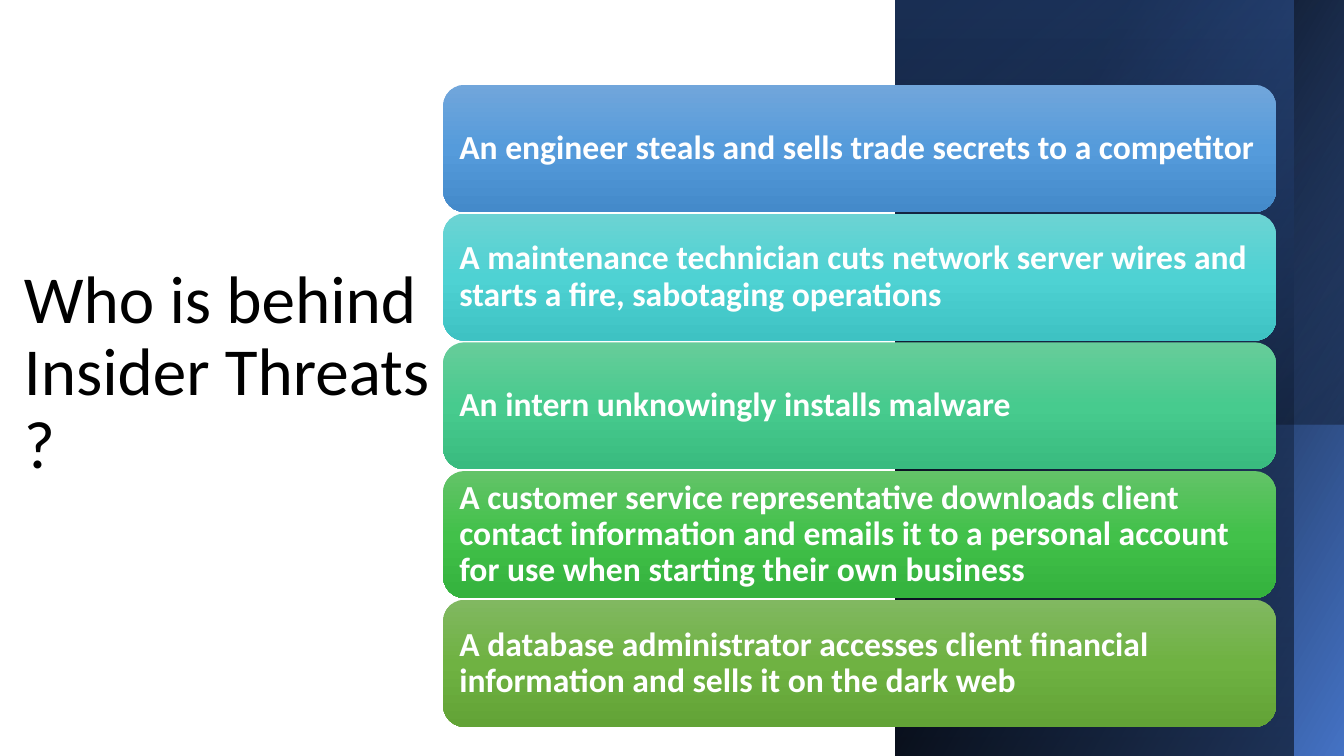
from lxml import etree
from pptx import Presentation
from pptx.dml.color import RGBColor
from pptx.enum import shapes, text
from pptx.oxml import ns
from pptx.util import Pt

COLORS = {
    "black": "000000", "white": "FFFFFF", "blue": "4472C4", "navy": "2F5597",
    "sky": ("71A6DB", "559BDB", "448ACA"),
    "teal": ("6CD3D3", "4ED2D3", "3EC2C3"),
    "mint": ("67CC9A", "47CB8E", "39BB7F"),
    "green": ("63C368", "42C14A", "34B23D"),
    "olive": ("81B861", "6FB242", "62A336"),
}
FONT = "Calibri"
TITLE = "Who is behind Insider Threats ?"
THREATS = [
    ("sky", "An engineer steals and sells trade secrets to a competitor"),
    ("teal", "A maintenance technician cuts network server wires and starts a fire, "
             "sabotaging operations"),
    ("mint", "An intern unknowingly installs malware"),
    ("green", "A customer service representative downloads client contact information "
              "and emails it to a personal account for use when starting their own business"),
    ("olive", "A database administrator accesses client financial information "
              "and sells it on the dark web"),
]


def set_gradient(sp, stops, angle):
    """Fill with (position %, colour, opacity %) stops; angle is clockwise."""
    sp.fill.background()
    old = sp._element.spPr.find(ns.qn("a:noFill"))
    grad = etree.Element(ns.qn("a:gradFill"), rotWithShape="1")
    stop_list = etree.SubElement(grad, ns.qn("a:gsLst"))
    for position, color, opacity in stops:
        gs = etree.SubElement(stop_list, ns.qn("a:gs"), pos=str(position * 1000))
        rgb = etree.SubElement(gs, ns.qn("a:srgbClr"), val=color)
        if opacity < 100:
            etree.SubElement(rgb, ns.qn("a:alpha"), val=str(opacity * 1000))
    etree.SubElement(grad, ns.qn("a:lin"), ang=str(angle * 60000), scaled="0")
    old.getparent().replace(old, grad)


def add_gradient_shape(s, kind, box, stops, angle):
    sp = s.shapes.add_shape(kind, *map(Pt, box))
    sp.shadow.inherit = False
    sp.line.fill.background()
    set_gradient(sp, stops, angle)
    return sp


def write_text(sp, words, size, color, bold=False):
    tf = sp.text_frame
    tf.word_wrap = True
    tf.text = words
    p = tf.paragraphs[0]
    p.alignment = text.PP_ALIGN.LEFT
    p.line_spacing = 0.9
    r = p.runs[0]
    r.font.name, r.font.size, r.font.bold = FONT, Pt(size), bold
    r.font.color.rgb = RGBColor.from_string(color)
    return tf


def add_backdrop(s, left, top, width, height):
    """Dark blue panel built from three overlapping gradients."""
    rect = shapes.MSO_SHAPE.RECTANGLE
    black, blue, navy = COLORS["black"], COLORS["blue"], COLORS["navy"]
    base = add_gradient_shape(s, rect, (left, top, width, height),
                              [(26, black, 100), (100, blue, 100)], 150)
    veil = add_gradient_shape(s, rect, (left, top, width - 36, height),
                              [(0, navy, 56), (100, black, 52)], 90)
    for sp in (base, veil):
        sp._element.spPr.find(ns.qn("a:xfrm")).set("flipH", "1")

    # Upper shade: a quarter turn swaps its sides about the same centre
    depth = 303.2
    shift = (width - depth) / 2
    shade = add_gradient_shape(s, rect, (left + shift, top - shift, depth, width),
                               [(0, black, 34), (96, blue, 0)], 140)
    shade.rotation = 90


def add_title(s, left, top, width, height):
    sp = s.shapes.add_textbox(*map(Pt, (left, top, width, height)))
    tf = write_text(sp, TITLE, 48, COLORS["black"])
    tf.vertical_anchor = text.MSO_ANCHOR.TOP


def add_threat_cards(s, left, top, width, height):
    gap = 1.2
    card_height = (height - gap * (len(THREATS) - 1)) / len(THREATS)
    for i, (color, words) in enumerate(THREATS):
        box = (left, top + i * (card_height + gap), width, card_height)
        stops = [(50 * n, c, 100) for n, c in enumerate(COLORS[color])]
        sp = add_gradient_shape(s, shapes.MSO_SHAPE.ROUNDED_RECTANGLE, box, stops, 90)
        tf = write_text(sp, words, 24, COLORS["white"], bold=True)
        tf.vertical_anchor = text.MSO_ANCHOR.MIDDLE
        tf.margin_left = tf.margin_right = tf.margin_top = tf.margin_bottom = Pt(7.2)


def main():
    prs = Presentation()
    prs.slide_width, prs.slide_height = Pt(960), Pt(540)
    s = prs.slides.add_slide(prs.slide_layouts[6])
    add_title(s, 10, 185.8, 306.8, 249)
    add_backdrop(s, 639.4, 0, 320.6, 540)
    add_threat_cards(s, 316.6, 60.6, 594.8, 458.6)
    prs.save("out.pptx")


if __name__ == "__main__":
    main()
